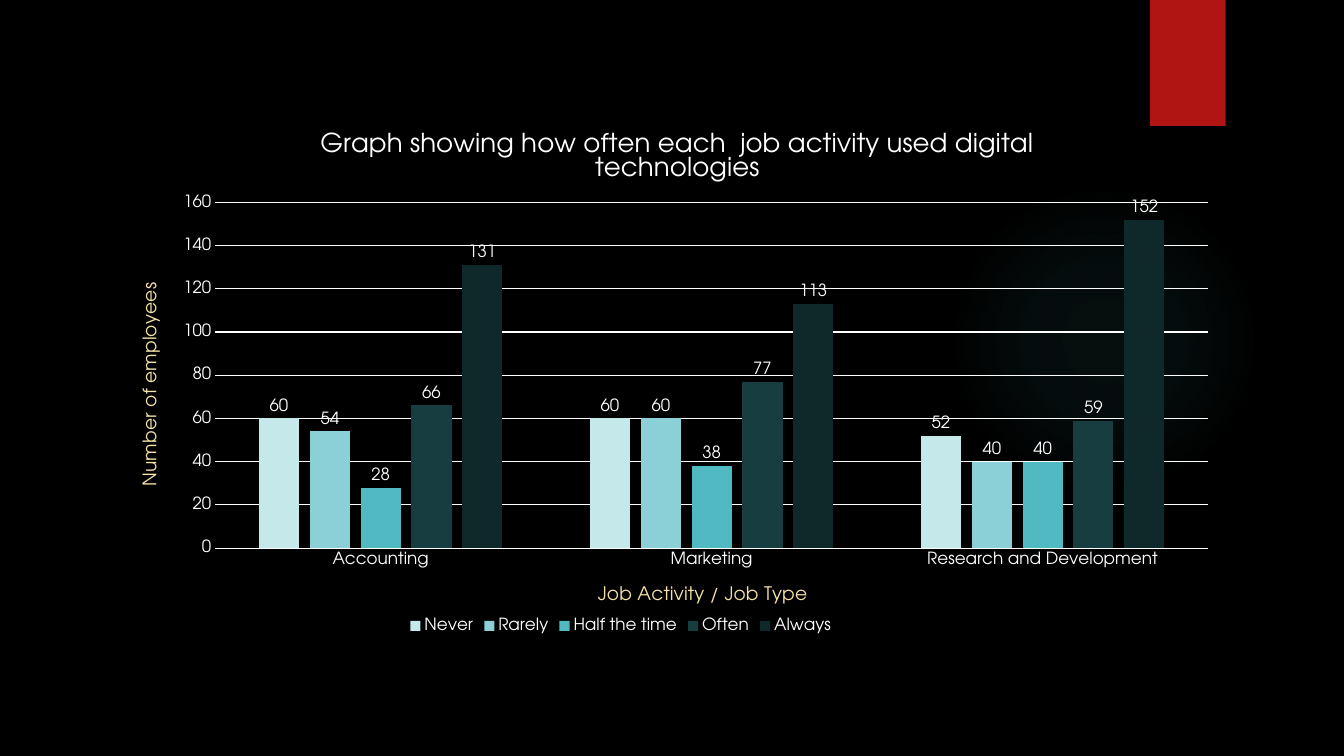
from lxml import etree
from pptx import Presentation
from pptx.chart.data import CategoryChartData
from pptx.dml.color import RGBColor
from pptx.enum.chart import XL_CHART_TYPE as CHART, XL_LABEL_POSITION as LABEL
from pptx.enum.chart import XL_LEGEND_POSITION as LEGEND, XL_TICK_MARK as TICK
from pptx.enum.shapes import MSO_SHAPE as SHAPE
from pptx.oxml import parse_xml
from pptx.oxml.ns import nsdecls, qn
from pptx.util import Pt

FONT = "TeX Gyre Adventor"
COLORS = {
    "background": "000000", "text": "FFFFFF", "axis_title": "F5E2A9",
    "tab": "B01513", "glow": "50B9C1",
    "Never": "C5E8EA", "Rarely": "8AD0D6", "Half the time": "50B9C1",
    "Often": "173D40", "Always": "0F282A",
}
JOBS = ["Accounting", "Marketing", "Research and Development"]
ANSWERS = {
    "Never": (60, 60, 52),
    "Rarely": (54, 60, 40),
    "Half the time": (28, 38, 40),
    "Often": (66, 77, 59),
    "Always": (131, 113, 152),
}
GLOW_STOPS = [(0, 7), (36, 6), (69, 0)]


def rgb(name):
    """Return the named colour."""
    return RGBColor.from_string(COLORS[name])


def paint(fill, name):
    """Fill with one solid colour."""
    fill.solid()
    fill.fore_color.rgb = rgb(name)


def style_font(font, size, color="text"):
    """Set the face, size and colour of a font."""
    font.name, font.size, font.bold = FONT, Pt(size), False
    font.color.rgb = rgb(color)


def add_block(slide, kind, x, y, w, h, color):
    """Add a filled shape without outline or shadow."""
    s = slide.shapes.add_shape(kind, Pt(x), Pt(y), Pt(w), Pt(h))
    s.shadow.inherit = False
    s.line.fill.background()
    paint(s.fill, color)
    return s


def add_glow(slide, x, y, size):
    """Add a circle that fades out from its centre."""
    s = add_block(slide, SHAPE.OVAL, x, y, size, size, "glow")
    stops = "".join(
        f'<a:gs pos="{pos * 1000}"><a:srgbClr val="{COLORS["glow"]}">'
        f'<a:alpha val="{alpha * 1000}"/></a:srgbClr></a:gs>'
        for pos, alpha in GLOW_STOPS)
    grad = parse_xml(
        f'<a:gradFill {nsdecls("a")}><a:gsLst>{stops}</a:gsLst><a:path path="circle">'
        '<a:fillToRect l="50000" t="50000" r="50000" b="50000"/></a:path></a:gradFill>')
    solid = s._element.spPr.find(qn("a:solidFill"))
    solid.getparent().replace(solid, grad)


def place(element, index, **fractions):
    """Place a chart part by fractions of the chart size."""
    for old in element.findall(qn("c:layout")):
        element.remove(old)
    layout = etree.Element(qn("c:layout"))
    manual = etree.SubElement(layout, qn("c:manualLayout"))
    if "w" in fractions:
        etree.SubElement(manual, qn("c:layoutTarget")).set("val", "inner")
    for key in ("x", "y"):
        etree.SubElement(manual, qn(f"c:{key}Mode")).set("val", "edge")
    for key, value in fractions.items():
        etree.SubElement(manual, qn(f"c:{key}")).set("val", str(value))
    element.insert(index, layout)


def set_title(title, text, size, color, x, y, turn=0):
    """Write, turn and place a chart or axis title."""
    tf = title.text_frame
    tf.text = text
    style_font(tf.paragraphs[0].font, size, color)
    tf._txBody.bodyPr.set("rot", str(turn * 60000))
    tf._txBody.bodyPr.set("vert", "horz")
    place(title._element, 1, x=x, y=y)


def style_axes(chart):
    """Format both axes and the grid lines."""
    for axis in (chart.category_axis, chart.value_axis):
        axis.major_tick_mark = axis.minor_tick_mark = TICK.NONE
        style_font(axis.tick_labels.font, 12)
    values = chart.value_axis
    values.minimum_scale, values.maximum_scale, values.major_unit = 0, 160, 20
    values.format.line.fill.background()
    for line in (chart.category_axis.format.line, values.major_gridlines.format.line):
        line.color.rgb = rgb("text")
        line.width = Pt(0.75)


def style_bars(plot):
    """Set bar spacing, colours and value labels."""
    plot.gap_width, plot.overlap, plot.vary_by_categories = 219, -27, False
    for series in plot.series:
        paint(series.format.fill, series.name)
        labels = series.data_labels
        labels.show_value = True
        labels.position = LABEL.OUTSIDE_END
        style_font(labels.font, 12)


def add_usage_chart(slide, x, y, w, h):
    """Add the clustered column chart of technology use."""
    data = CategoryChartData()
    data.categories = JOBS
    for name, counts in ANSWERS.items():
        data.add_series(name, counts)
    chart = slide.shapes.add_chart(
        CHART.COLUMN_CLUSTERED, Pt(x), Pt(y), Pt(w), Pt(h), data).chart
    style_font(chart.font, 10)
    style_axes(chart)
    style_bars(chart.plots[0])
    set_title(chart.chart_title,
              "Graph showing how often each  job activity used digital technologies",
              18.6, "text", 0.18, 0.04)
    set_title(chart.category_axis.axis_title, "Job Activity / Job Type",
              13.3, "axis_title", 0.43, 0.87)
    set_title(chart.value_axis.axis_title, "Number of employees",
              13.3, "axis_title", 0.02, 0.32, -90)
    chart.has_legend = True
    chart.legend.position = LEGEND.BOTTOM
    chart.legend.include_in_layout = False
    style_font(chart.legend.font, 12)
    place(chart.legend._element, 1, x=0.26, y=0.93)
    place(chart._chartSpace.chart.plotArea, 0, x=0.09, y=0.18, w=0.89, h=0.63)


def main():
    """Build the slide and save it."""
    prs = Presentation()
    prs.slide_width, prs.slide_height = Pt(960), Pt(540)
    slide = prs.slides.add_slide(prs.slide_layouts[6])
    paint(slide.background.fill, "background")
    add_glow(slide, 677.5, 132, 222)
    add_block(slide, SHAPE.RECTANGLE, 821.5, 0, 54, 90, "tab")
    add_usage_chart(slide, 82, 74, 797, 392)
    prs.save("out.pptx")


if __name__ == "__main__":
    main()
